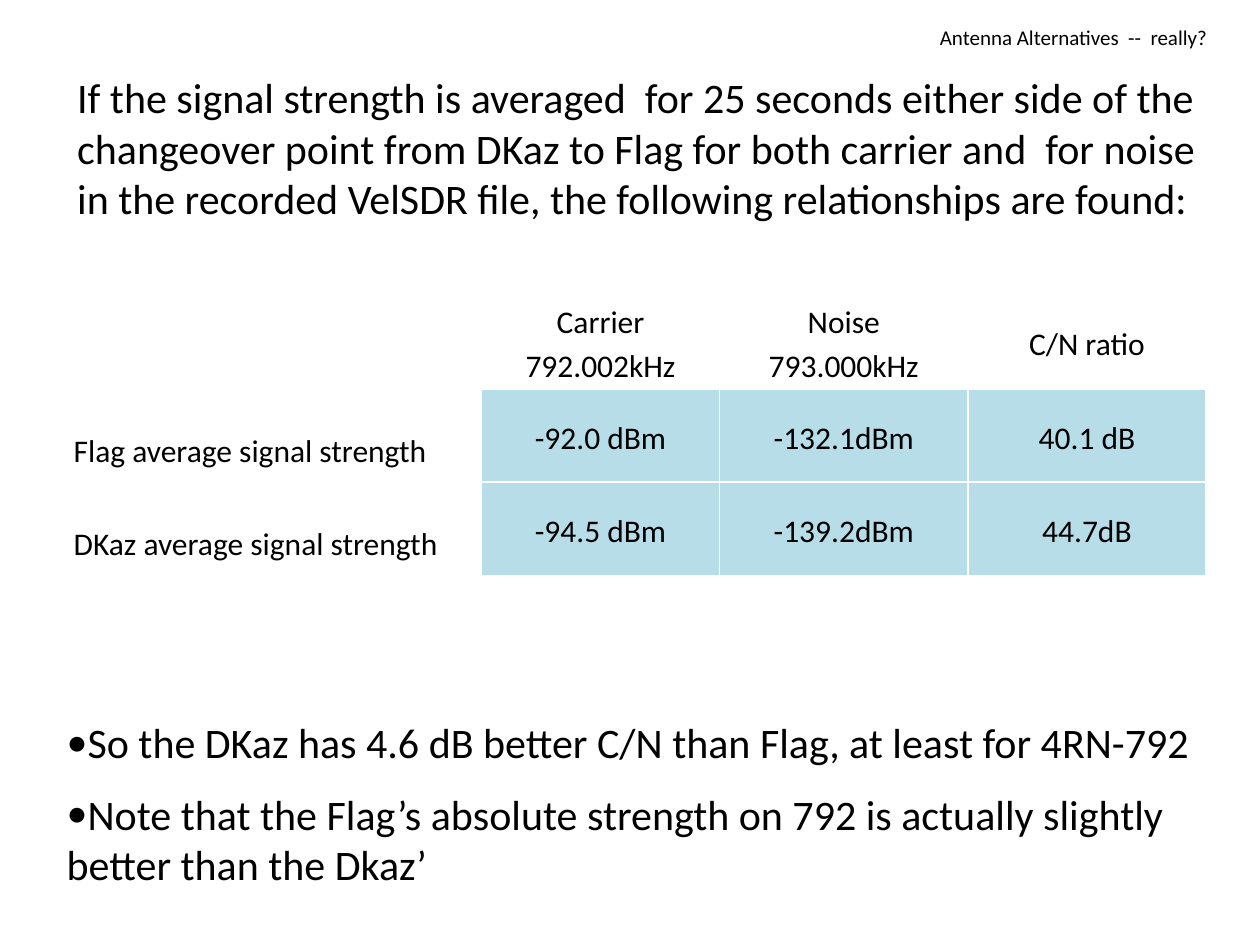
"""Build the slide comparing Flag and DKaz antenna signal strengths."""
from lxml.etree import SubElement
from pptx import Presentation
from pptx.dml.color import RGBColor
from pptx.enum.text import MSO_ANCHOR, PP_ALIGN
from pptx.oxml.ns import qn
from pptx.util import Pt


def color(hex_code):
    return RGBColor.from_string(hex_code)


def write(frame, text, size=18, align=PP_ALIGN.LEFT, anchor=MSO_ANCHOR.TOP,
          line_spacing=1.0, space_before=0, bullet=None):
    frame.word_wrap = True
    frame.vertical_anchor = anchor
    frame.text = text
    for index, paragraph in enumerate(frame.paragraphs):
        paragraph.alignment = align
        paragraph.line_spacing = line_spacing
        paragraph.space_before = Pt(space_before if index else 0)
        paragraph.font.size = Pt(size)
        paragraph.font.name = "Calibri"
        paragraph.font.color.rgb = color("000000")
        if bullet:
            properties = paragraph._p.get_or_add_pPr()
            properties.set("marL", "0")
            properties.set("indent", "0")
            for tag, attributes in (("a:buFont", {"typeface": "Calibri"}),
                                    ("a:buChar", {"char": bullet})):
                mark = properties.makeelement(qn(tag), attributes)
                properties.insert_element_before(mark, "a:tabLst", "a:defRPr", "a:extLst")


presentation = Presentation()
presentation.slide_width, presentation.slide_height = Pt(720), Pt(540)
slide = presentation.slides.add_slide(presentation.slide_layouts[6])

title = slide.shapes.add_textbox(Pt(530), Pt(0), Pt(190), Pt(32))
write(title.text_frame, "Antenna Alternatives  --  really?", size=12, anchor=MSO_ANCHOR.BOTTOM)

introduction = slide.shapes.add_textbox(Pt(37), Pt(37.5), Pt(663), Pt(102))
write(introduction.text_frame,
      "If the signal strength is averaged  for 25 seconds either side of the changeover point "
      "from DKaz to Flag for both carrier and  for noise in the recorded VelSDR file, "
      "the following relationships are found:", size=24)

measurements = [
    ["", "", "", ""],
    ["", "Carrier 792.002kHz", "Noise 793.000kHz", "C/N ratio"],
    ["Flag average signal strength", "-92.0 dBm", "-132.1dBm", "40.1 dB"],
    ["DKaz average signal strength", "-94.5 dBm", "-139.2dBm", "44.7dB"],
]
column_widths = [238.5, 136, 142, 136]
row_heights = [29.2, 53.3, 53.3, 53.3]
comparison = slide.shapes.add_table(
    len(row_heights), len(column_widths), Pt(36.7), Pt(139.7),
    Pt(sum(column_widths)), Pt(sum(row_heights))).table
comparison.first_row = comparison.horz_banding = False
for column, width in zip(comparison.columns, column_widths):
    column.width = Pt(width)
for row, height in zip(comparison.rows, row_heights):
    row.height = Pt(height)

for row_index, row_values in enumerate(measurements):
    for column_index, value in enumerate(row_values):
        cell = comparison.cell(row_index, column_index)
        for side in ("L", "R", "T", "B"):
            border = SubElement(cell._tc.get_or_add_tcPr(), qn(f"a:ln{side}"), w=str(Pt(1)))
            paint = SubElement(border, qn("a:solidFill"))
            SubElement(paint, qn("a:srgbClr"), val="FFFFFF")
        if row_index >= 2 and column_index:
            cell.fill.solid()
            cell.fill.fore_color.rgb = color("B7DEE8")
        else:
            cell.fill.background()
        if value:
            is_label = column_index == 0
            cell.margin_left = cell.margin_right = Pt(5.4 if is_label else 6)
            cell.margin_top = Pt(21.5 if is_label else 0)
            cell.margin_bottom = Pt(0)
            write(cell.text_frame, value, line_spacing=1.15,
                  align=PP_ALIGN.LEFT if is_label else PP_ALIGN.CENTER)
            cell.vertical_anchor = MSO_ANCHOR.TOP if is_label else MSO_ANCHOR.MIDDLE

conclusions = slide.shapes.add_textbox(Pt(31), Pt(406), Pt(663), Pt(102))
write(conclusions.text_frame,
      "So the DKaz has 4.6 dB better C/N than Flag, at least for 4RN-792\n"
      "Note that the Flag’s absolute strength on 792 is actually slightly better than the Dkaz’",
      size=24, space_before=12, bullet="•")

presentation.save("out.pptx")
